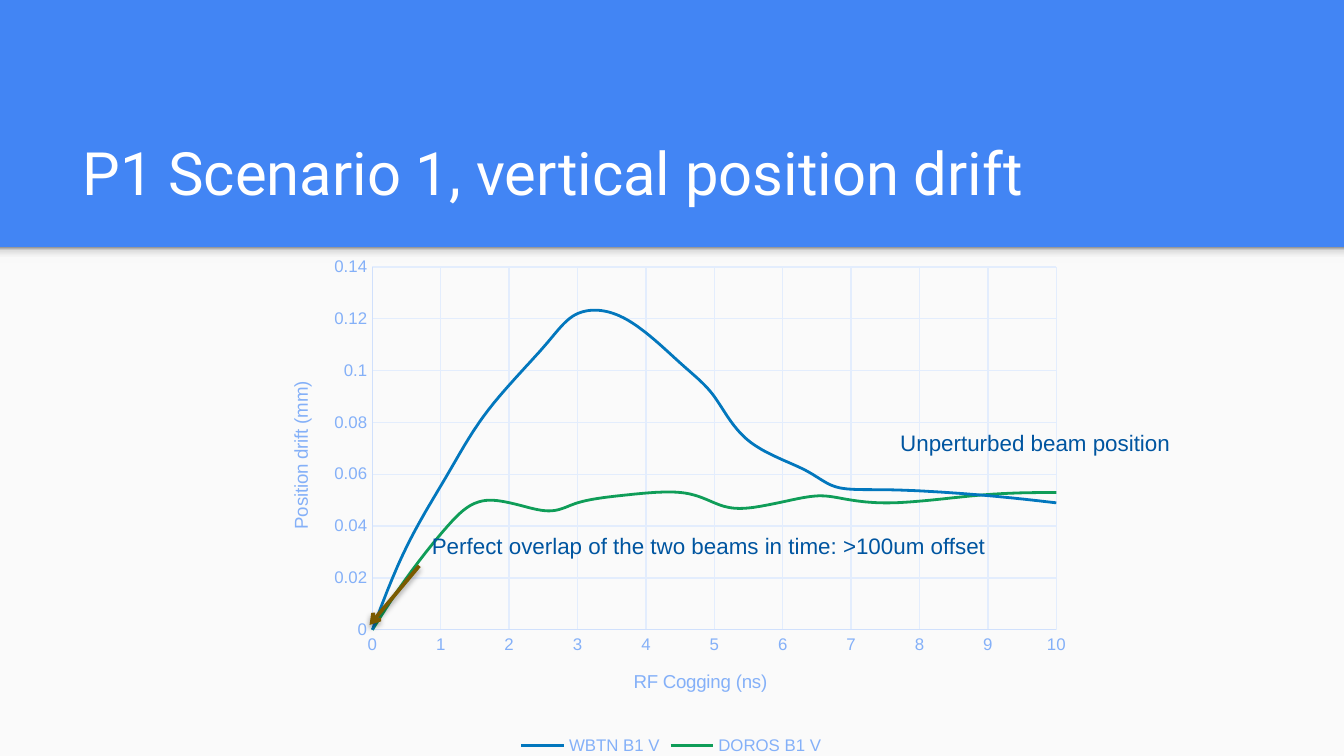
from dataclasses import dataclass

from lxml.etree import SubElement
from pptx import Presentation
from pptx.chart.data import XyChartData
from pptx.dml.color import RGBColor
from pptx.enum.chart import XL_CHART_TYPE as ChartType
from pptx.enum.chart import XL_LEGEND_POSITION as LegendPosition
from pptx.enum.chart import XL_TICK_MARK as TickMark
from pptx.enum.shapes import MSO_CONNECTOR as Connector
from pptx.enum.shapes import MSO_SHAPE as Shape
from pptx.enum.text import MSO_ANCHOR as Anchor
from pptx.enum.text import MSO_AUTO_SIZE as AutoSize
from pptx.oxml import parse_xml
from pptx.oxml.ns import nsdecls, qn
from pptx.util import Emu, Pt

EMU_PER_PX = 4572


@dataclass(frozen=True)
class Theme:
    """Colours, fonts and type sizes of the slide."""
    header: str = "4285F4"
    panel: str = "FAFAFA"
    title: str = "FFFFFF"
    axis_text: str = "84B0F8"
    axis_line: str = "D0E0FC"
    grid: str = "E3EDFD"
    wideband: str = "0277BD"
    doros: str = "0F9D58"
    note: str = "0055A0"
    arrow: str = "7A5A00"
    title_font: str = "Roboto"
    body_font: str = "Arial"
    title_size: int = 32
    note_size: int = 12
    axis_title_size: int = 10
    axis_size: int = 9


THEME = Theme()
SHADE_STOPS = ((0, "F9F9F9"), (36, "F9F9F9"), (80, "DEDEDE"), (100, "999999"))
COGGING = (0, 0.5, 1.1, 1.7, 2.5, 3, 3.7, 4.5, 5, 5.5, 6.3, 6.8, 7.6, 8.9, 10)
DRIFT = (
    ("WBTN B1 V", THEME.wideband,
     (0, 0.032, 0.06, 0.085, 0.109, 0.122, 0.12, 0.103, 0.09, 0.073, 0.062,
      0.055, 0.054, 0.052, 0.049)),
    ("DOROS B1 V", THEME.doros,
     (0, 0.02, 0.04, 0.05, 0.046, 0.049, 0.052, 0.053, 0.049, 0.047, 0.051,
      0.051, 0.049, 0.052, 0.053)),
)


def px(*lengths):
    """Turn px lengths into EMU."""
    return [Emu(length * EMU_PER_PX) for length in lengths]


def style_font(font, size, color, name=THEME.body_font):
    """Set the size, colour and typeface of a font."""
    font.size = Pt(size)
    font.name = name
    font.color.rgb = RGBColor.from_string(color)


def style_line(line, color, width):
    """Set the colour and width of a line."""
    line.color.rgb = RGBColor.from_string(color)
    line.width = Pt(width)


def add_panel(slide, left, top, width, height):
    """Add the light content panel with the header's shade along its top."""
    panel = slide.shapes.add_shape(Shape.RECTANGLE, *px(left, top, width, height))
    panel.fill.solid()
    panel.fill.fore_color.rgb = RGBColor.from_string(THEME.panel)
    shade = slide.shapes.add_shape(Shape.RECTANGLE, *px(left, top, width, 24))
    for shape in (panel, shade):
        shape.shadow.inherit = False
        shape.line.fill.background()
    stops = "".join(
        f'<a:gs pos="{position * 1000}"><a:srgbClr val="{color}"/></a:gs>'
        for position, color in SHADE_STOPS)
    gradient = parse_xml(
        f'<a:gradFill {nsdecls("a")}><a:gsLst>{stops}</a:gsLst>'
        '<a:lin ang="16200000" scaled="0"/></a:gradFill>')
    shade._element.spPr.find(qn("a:prstGeom")).addnext(gradient)


def add_title(slide, text, left, top, width, height):
    """Add the slide title at the bottom of its box."""
    frame = slide.shapes.add_textbox(*px(left, top, width, height)).text_frame
    frame.word_wrap = True
    frame.vertical_anchor = Anchor.BOTTOM
    (frame.margin_left, frame.margin_top,
     frame.margin_right, frame.margin_bottom) = px(20, 20, 20, 20)
    frame.text = text
    style_font(frame.paragraphs[0].font, THEME.title_size, THEME.title, THEME.title_font)


def add_note(slide, text, left, top, width, height):
    """Add a one-line note over the chart."""
    frame = slide.shapes.add_textbox(*px(left, top, width, height)).text_frame
    frame.word_wrap = False
    frame.auto_size = AutoSize.SHAPE_TO_FIT_TEXT
    frame.text = text
    style_font(frame.paragraphs[0].font, THEME.note_size, THEME.note)


def place(element, **fractions):
    """Give a chart part a manual layout in fractions of the chart."""
    layout = element.find(qn("c:layout"))
    if layout is None:
        layout = parse_xml(f'<c:layout {nsdecls("c")}/>')
        element.insert(0, layout)
    manual = SubElement(layout, qn("c:manualLayout"))
    if "w" in fractions:
        SubElement(manual, qn("c:layoutTarget")).set("val", "inner")
    for side in ("x", "y"):
        SubElement(manual, qn(f"c:{side}Mode")).set("val", "edge")
    for side, fraction in fractions.items():
        SubElement(manual, qn(f"c:{side}")).set("val", str(fraction))


def style_axis(axis, title, maximum, unit, title_x, title_y, rotation):
    """Set the scale, grid, labels and title of a chart axis."""
    axis.minimum_scale, axis.maximum_scale, axis.major_unit = 0, maximum, unit
    axis.major_tick_mark = axis.minor_tick_mark = TickMark.NONE
    axis.has_major_gridlines = True
    style_line(axis.major_gridlines.format.line, THEME.grid, 0.75)
    style_line(axis.format.line, THEME.axis_line, 0.75)
    style_font(axis.tick_labels.font, THEME.axis_size, THEME.axis_text)
    axis.tick_labels.number_format = "General"
    axis.tick_labels.number_format_is_linked = False
    frame = axis.axis_title.text_frame
    frame.text = title
    font = frame.paragraphs[0].font
    style_font(font, THEME.axis_title_size, THEME.axis_text)
    font.bold = False
    frame._txBody.find(qn("a:bodyPr")).set("rot", str(rotation * 60000))
    place(axis.axis_title._element, x=title_x, y=title_y)


def add_drift_chart(slide, left, top, width, height):
    """Add the smooth scatter chart of drift against cogging."""
    data = XyChartData()
    for name, _, drifts in DRIFT:
        series = data.add_series(name)
        for cogging, drift in zip(COGGING, drifts):
            series.add_data_point(cogging, drift)
    chart = slide.shapes.add_chart(
        ChartType.XY_SCATTER_SMOOTH_NO_MARKERS,
        *px(left, top, width, height), data).chart
    style_font(chart.font, THEME.axis_title_size, THEME.header)
    chart.has_title = False
    chart.plots[0].vary_by_categories = False
    for series, (_, color, _) in zip(chart.plots[0].series, DRIFT):
        style_line(series.format.line, color, 1.5)
        series._element.find(qn("c:smooth")).set("val", "1")
    style_axis(chart.category_axis, "RF Cogging (ns)", 10, 1, 0.45, 0.816, 0)
    style_axis(chart.value_axis, "Position drift (mm)", 0.14, 0.02, 0.03, 0.257, -90)
    place(chart._chartSpace.chart.plotArea, x=0.136, y=0.041, w=0.833, h=0.705)
    chart.has_legend = True
    chart.legend.position = LegendPosition.BOTTOM
    chart.legend.include_in_layout = False
    style_font(chart.legend.font, THEME.axis_size, THEME.axis_text)


def add_arrow(slide, start_x, start_y, end_x, end_y):
    """Add a shadowed arrow between two points."""
    arrow = slide.shapes.add_connector(
        Connector.STRAIGHT, *px(start_x, start_y, end_x, end_y))
    style_line(arrow.line, THEME.arrow, 2)
    SubElement(arrow.line._get_or_add_ln(), qn("a:tailEnd")).set("type", "arrow")
    arrow._element.spPr.append(parse_xml(
        f'<a:effectLst {nsdecls("a")}><a:outerShdw blurRad="{Pt(3.1)}" '
        f'dist="{Pt(1.6)}" dir="5400000" rotWithShape="0"><a:srgbClr val="000000">'
        '<a:alpha val="38000"/></a:srgbClr></a:outerShdw></a:effectLst>'))


def main():
    """Build the slide and save it."""
    presentation = Presentation()
    presentation.slide_width, presentation.slide_height = px(2000, 1125)
    slide = presentation.slides.add_slide(presentation.slide_layouts[6])
    slide.background.fill.solid()
    slide.background.fill.fore_color.rgb = RGBColor.from_string(THEME.header)
    add_panel(slide, 0, 368, 2000, 757)
    add_title(slide, "P1 Scenario 1, vertical position drift", 103, 161, 1798, 168)
    add_drift_chart(slide, 388, 366, 1222, 766)
    add_note(slide, "Unperturbed beam position", 1320, 629, 446, 60)
    add_note(slide, "Perfect overlap of the two beams in time: >100um offset",
             623, 782, 872, 60)
    add_arrow(slide, 624, 842, 550, 930)
    presentation.save("out.pptx")


if __name__ == "__main__":
    main()
